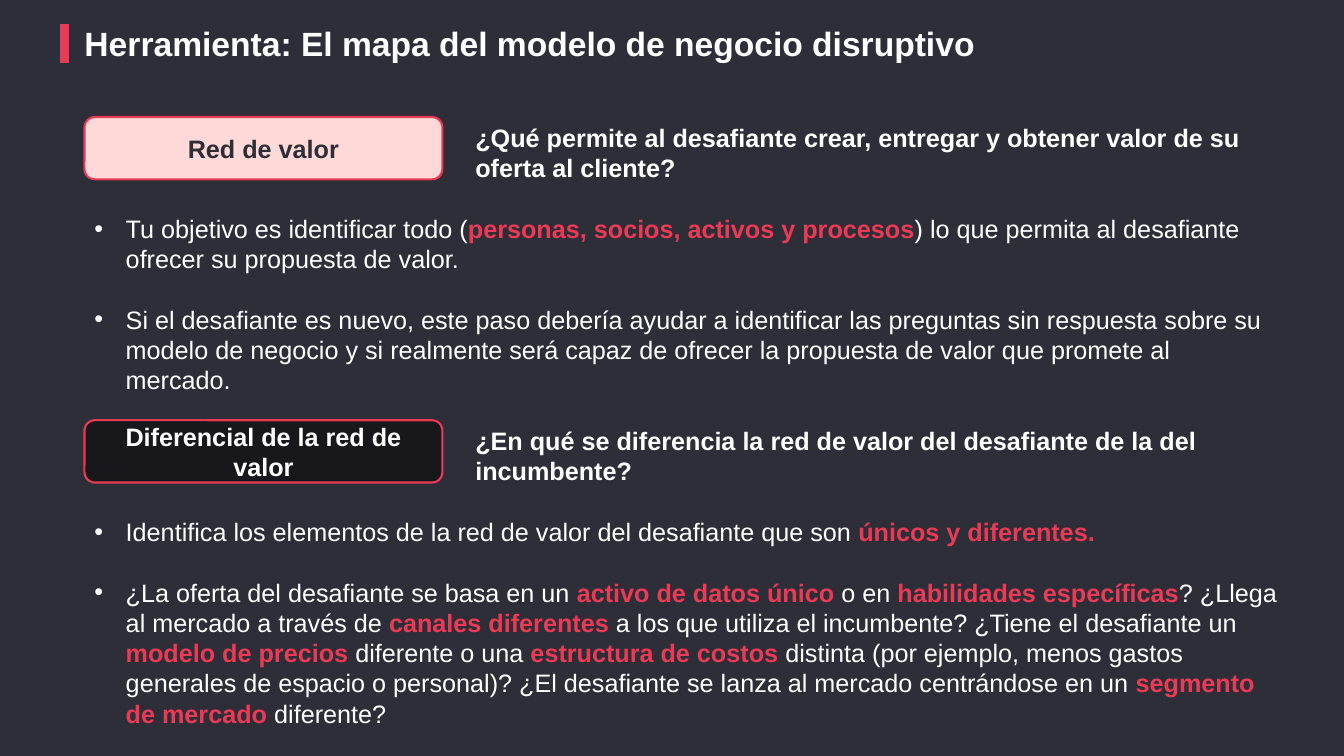
from dataclasses import dataclass

from lxml import etree
from pptx import Presentation
from pptx import util as u
from pptx.dml.color import RGBColor
from pptx.enum import shapes, text
from pptx.oxml import ns


@dataclass(frozen=True)
class Theme:
    font: str = "Arial"
    background: str = "2E2E38"
    light: str = "FFFFFF"
    accent: str = "EA3A55"
    pink: str = "FFD9D7"
    black: str = "17171C"
    title_size: float = 24
    body_size: float = 18
    bullet_gap: float = 21.6


class SlideBuilder:
    def __init__(self, slide, theme):
        self.slide = slide
        self.theme = theme
        slide.background.fill.solid()
        slide.background.fill.fore_color.rgb = RGBColor.from_string(theme.background)

    def style(self, font, size, color, bold):
        font.name = self.theme.font
        font.size = u.Pt(size)
        font.bold = bold
        font.color.rgb = RGBColor.from_string(color)

    def text_area(self, left, top, width, height):
        area = self.slide.shapes.add_textbox(
            u.Cm(left), u.Cm(top), u.Cm(width), u.Cm(height))
        frame = area.text_frame
        frame.word_wrap = True
        frame.auto_size = text.MSO_AUTO_SIZE.SHAPE_TO_FIT_TEXT
        return frame

    def heading(self, wording, left, top, width, height, size):
        frame = self.text_area(left, top, width, height)
        frame.text = wording
        self.style(frame.paragraphs[0].runs[0].font, size, self.theme.light, True)
        return frame

    def title(self, wording):
        frame = self.heading(wording, 2.13, 0.64, 26.97, 0.97, self.theme.title_size)
        frame.margin_left = frame.margin_right = frame.margin_bottom = 0
        frame.margin_top = u.Cm(0.1)
        frame.paragraphs[0].line_spacing = 0.85
        frame.paragraphs[0].space_after = u.Pt(6)

    def accent_bar(self, x, top, bottom):
        bar = self.slide.shapes.add_connector(
            shapes.MSO_CONNECTOR.STRAIGHT, u.Cm(x), u.Cm(top), u.Cm(x), u.Cm(bottom))
        bar.line.color.rgb = RGBColor.from_string(self.theme.accent)
        bar.line.width = u.Pt(6)
        etree.SubElement(bar._element.spPr, ns.qn("a:effectLst"))

    def label(self, wording, top, fill, color):
        label = self.slide.shapes.add_shape(
            shapes.MSO_SHAPE.ROUNDED_RECTANGLE,
            u.Cm(2.13), u.Cm(top), u.Cm(9.02), u.Cm(1.57))
        label.shadow.inherit = False
        label.fill.solid()
        label.fill.fore_color.rgb = RGBColor.from_string(fill)
        label.line.color.rgb = RGBColor.from_string(self.theme.accent)
        label.line.width = u.Pt(1.5)
        frame = label.text_frame
        frame.word_wrap = True
        frame.vertical_anchor = text.MSO_ANCHOR.MIDDLE
        frame.text = wording
        frame.paragraphs[0].alignment = text.PP_ALIGN.CENTER
        self.style(frame.paragraphs[0].runs[0].font, self.theme.body_size, color, True)

    def bullets(self, items, top, height):
        frame = self.text_area(2.13, top, 30.43, height)
        for index, item in enumerate(items):
            paragraph = frame.add_paragraph() if index else frame.paragraphs[0]
            if index:
                paragraph.space_before = u.Pt(self.theme.bullet_gap)
            properties = paragraph._p.get_or_add_pPr()
            properties.set("marL", str(u.Cm(0.79)))
            properties.set("indent", str(-u.Cm(0.79)))
            etree.SubElement(properties, ns.qn("a:buFont"), typeface=self.theme.font)
            etree.SubElement(properties, ns.qn("a:buChar"), char="•")
            for position, wording in enumerate(item.split("*")):
                if wording:
                    emphasised = position % 2 == 1
                    run = paragraph.add_run()
                    run.text = wording
                    color = self.theme.accent if emphasised else self.theme.light
                    self.style(run.font, self.theme.body_size, color, emphasised)

    def section(self, top, height, name, fill, color, question, items):
        self.label(name, top, fill, color)
        self.heading(question, 11.73, top, 20.85, 1.8, self.theme.body_size)
        self.bullets(items, top + 2.3, height)


def main():
    theme = Theme()
    deck = Presentation()
    deck.slide_width, deck.slide_height = u.Cm(33.87), u.Cm(19.05)
    builder = SlideBuilder(deck.slides.add_slide(deck.slide_layouts[6]), theme)

    builder.accent_bar(1.63, 0.61, 1.6)
    builder.title("Herramienta: El mapa del modelo de negocio disruptivo")
    builder.section(
        2.95, 4.88, "Red de valor", theme.pink, theme.background,
        "¿Qué permite al desafiante crear, entregar y obtener valor de su oferta al cliente?",
        [
            "Tu objetivo es identificar todo (*personas, socios, activos y procesos*) "
            "lo que permita al desafiante ofrecer su propuesta de valor.",
            "Si el desafiante es nuevo, este paso debería ayudar a identificar las preguntas "
            "sin respuesta sobre su modelo de negocio y si realmente será capaz de ofrecer "
            "la propuesta de valor que promete al mercado.",
        ])
    builder.section(
        10.59, 5.64, "Diferencial de la red de valor", theme.black, theme.light,
        "¿En qué se diferencia la red de valor del desafiante de la del incumbente?",
        [
            "Identifica los elementos de la red de valor del desafiante que son "
            "*únicos y diferentes.*",
            "¿La oferta del desafiante se basa en un *activo de datos único* o en "
            "*habilidades específicas*? ¿Llega al mercado a través de *canales diferentes *"
            "a los que utiliza el incumbente? ¿Tiene el desafiante un *modelo de precios* "
            "diferente o una *estructura de costos *distinta (por ejemplo, menos gastos "
            "generales de espacio o personal)? ¿El desafiante se lanza al mercado "
            "centrándose en un *segmento de mercado* diferente?",
        ])
    deck.save("out.pptx")


if __name__ == "__main__":
    main()
